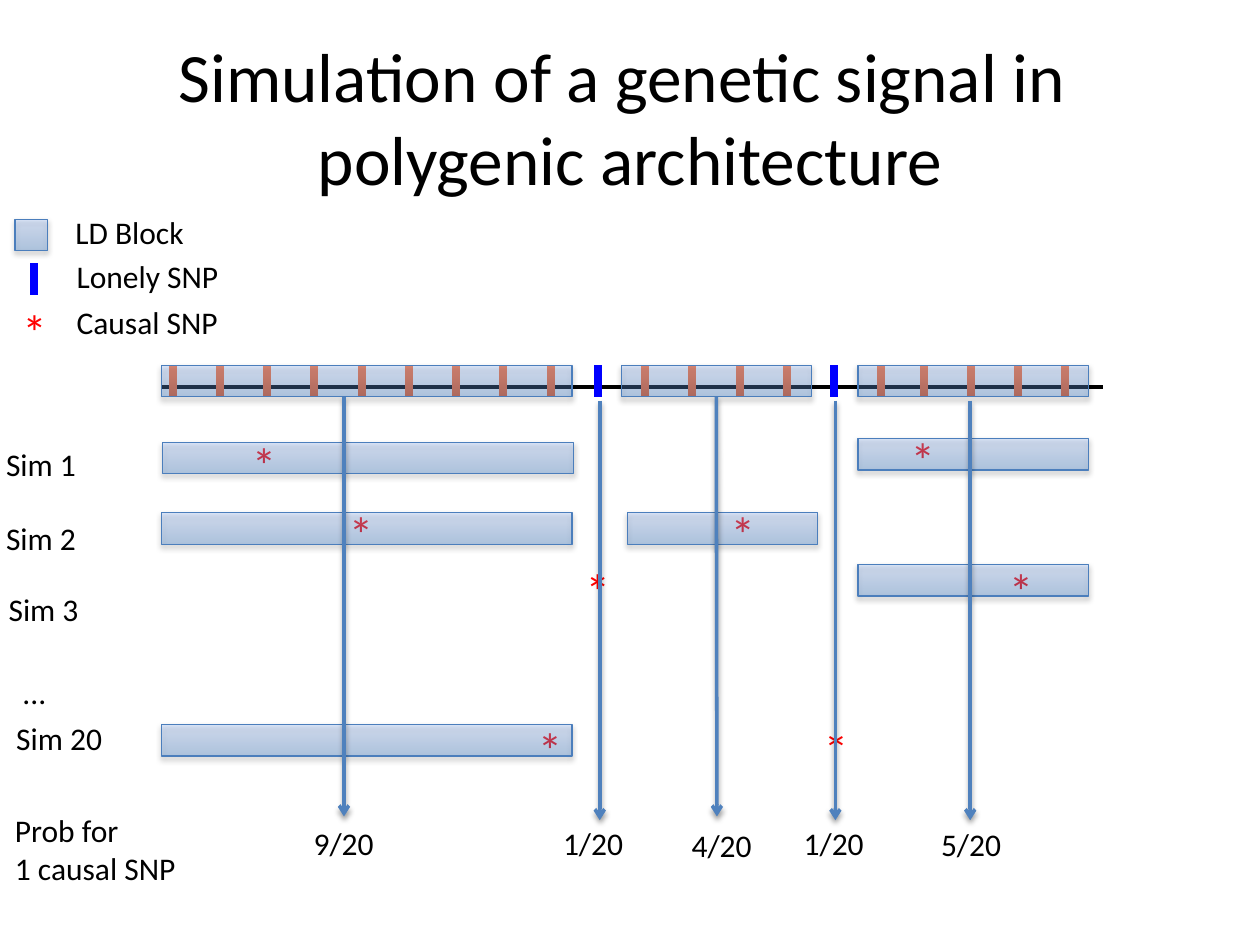
from dataclasses import dataclass

from lxml import etree
from pptx import Presentation
from pptx.dml.color import RGBColor
from pptx.enum.shapes import MSO_CONNECTOR, MSO_SHAPE
from pptx.enum.text import MSO_ANCHOR, PP_ALIGN
from pptx.oxml.ns import qn
from pptx.util import Inches, Pt

STRAIGHT = MSO_CONNECTOR.STRAIGHT
RECT = MSO_SHAPE.RECTANGLE
MIDDLE, TOP = MSO_ANCHOR.MIDDLE, MSO_ANCHOR.TOP
CENTER, LEFT = PP_ALIGN.CENTER, PP_ALIGN.LEFT
BOTTOM_SITE = 2


@dataclass(frozen=True)
class Theme:
    font: str = "Calibri"
    title: float = 39.6
    body: float = 18
    star: float = 28
    text: str = "000000"
    causal: str = "FF0000"
    lonely: str = "0000FF"
    snp: str = "FF6A2C"
    block: tuple = ("3F80CE", "A4C4FF")
    block_line: str = "4B7EBC"
    arrow: str = "4F81BD"


THEME = Theme()

# Genome grid: SNP columns at an even pitch, blocks as (left, width)
SNP_LEFT, SNP_PITCH, SNP_COUNT = 1.37, 0.375, 20
LAST_BLOCK_SNP, LAST_BLOCK_SHIFT = 16, -0.04
LONELY_SNPS = (9, 14)
GENOME_TOP, BLOCK_H = 2.9, 0.25
BLOCKS = ((1.28, 3.26), (4.93, 1.51), (6.81, 1.83))

# Simulated blocks: (block index, top, shift from the genome block)
SIM_BLOCKS = ((0, 3.51, 0.01), (0, 4.07, 0), (2, 3.48, 0),
              (2, 4.48, 0), (1, 4.07, 0.05), (0, 5.75, 0))
STARS = ((1.9, 3.4), (7.13, 3.36), (2.67, 3.95), (5.7, 3.95), (4.55, 4.4),
         (7.91, 4.4), (4.17, 5.66), (6.44, 5.66), (0.08, 2.34))
LABELS = (
    ("LD Block", 0.5, 1.64, 1.07), ("Lonely SNP", 0.51, 1.99, 1.34),
    ("Causal SNP", 0.51, 2.36, 1.33), ("Sim 1", -0.05, 3.48, 0.76),
    ("Sim 2", -0.05, 4.07, 0.76), ("Sim 3", -0.03, 4.63, 0.76),
    ("...", 0.08, 5.29, 0.39), ("Sim 20", 0.03, 5.66, 0.89),
    ("Prob for\n1 causal SNP", 0.02, 6.39, 1.49),
)
# Probabilities: (text, text left, text top, arrow x, arrow start, block index)
PROBS = (("9/20", 2.39, 6.49, 2.73, 3.15, None),
         ("1/20", 4.37, 6.49, 4.76, 3.18, None),
         ("4/20", 5.39, 6.51, 5.69, 3.15, 1),
         ("1/20", 6.28, 6.49, 6.63, 3.18, None),
         ("5/20", 7.37, 6.5, 7.7, 3.18, None))
PROB_W, ARROW_LEN = 0.68, 3.33


def rgb(color):
    return RGBColor.from_string(color)


def add_shadow(spPr, opacity):
    effects = spPr.find(qn("a:effectLst"))
    if effects is None:
        effects = etree.SubElement(spPr, qn("a:effectLst"))
    shadow = etree.SubElement(effects, qn("a:outerShdw"), blurRad=str(Pt(3.1)),
                              dist=str(Pt(1.8)), dir="5400000", rotWithShape="0")
    color = etree.SubElement(shadow, qn("a:srgbClr"), val="000000")
    etree.SubElement(color, qn("a:alpha"), val=str(opacity * 1000))


def add_text(s, text, x, y, w, h=0.4, size=THEME.body, color=THEME.text,
             wrap=False, anchor=TOP, align=LEFT):
    tf = s.shapes.add_textbox(Inches(x), Inches(y), Inches(w), Inches(h)).text_frame
    tf.text = text
    tf.word_wrap = wrap
    tf.vertical_anchor = anchor
    for p in tf.paragraphs:
        p.alignment = align
        p.font.name = THEME.font
        p.font.size = Pt(size)
        p.font.color.rgb = rgb(color)


def add_line(s, x1, y1, x2, y2, color, width):
    line = s.shapes.add_connector(STRAIGHT, Inches(x1), Inches(y1),
                                  Inches(x2), Inches(y2))
    line.line.color.rgb = rgb(color)
    line.line.width = Pt(width)
    etree.SubElement(line._element.spPr, qn("a:effectLst"))
    return line


def add_snp(s, x, y, color):
    add_line(s, x, y, x, y + BLOCK_H, color, 4.5)


def add_arrow(s, x, y, block=None):
    arrow = add_line(s, x, y, x, y + ARROW_LEN, THEME.arrow, 2)
    if block is not None:
        arrow.begin_connect(block, BOTTOM_SITE)
    spPr = arrow._element.spPr
    etree.SubElement(spPr.find(qn("a:ln")), qn("a:tailEnd"), type="arrow")
    add_shadow(spPr, 38)


def add_block(s, x, y, w):
    sp = s.shapes.add_shape(RECT, Inches(x), Inches(y), Inches(w), Inches(BLOCK_H))
    sp.fill.gradient()
    sp.fill.gradient_angle = 90
    for stop, color in zip(sp.fill.gradient_stops, THEME.block):
        stop.color.rgb = rgb(color)
    spPr = sp._element.spPr
    for color in spPr.iter(qn("a:srgbClr")):
        etree.SubElement(color, qn("a:alpha"), val="32000")
    sp.line.color.rgb = rgb(THEME.block_line)
    sp.line.width = Pt(0.75)
    sp.shadow.inherit = False
    add_shadow(spPr, 35)
    return sp


def add_genome(s):
    add_line(s, 1.28, 3.07, 8.75, 3.07, THEME.text, 2.25)
    for i in range(SNP_COUNT):
        shift = LAST_BLOCK_SHIFT if i >= LAST_BLOCK_SNP else 0
        color = THEME.lonely if i in LONELY_SNPS else THEME.snp
        add_snp(s, SNP_LEFT + i * SNP_PITCH + shift, GENOME_TOP, color)
    return [add_block(s, x, GENOME_TOP, w) for x, w in BLOCKS]


def main():
    prs = Presentation()
    prs.slide_width, prs.slide_height = Inches(10), Inches(7.5)
    s = prs.slides.add_slide(prs.slide_layouts[6])

    # Title
    add_text(s, "Simulation of a genetic signal in \vpolygenic architecture",
             0.5, 0.3, 9, 1.25, THEME.title, wrap=True, anchor=MIDDLE, align=CENTER)

    # Genome with its blocks
    genome_blocks = add_genome(s)

    # Legend keys and row labels
    add_block(s, 0.12, 1.74, 0.26)
    add_snp(s, 0.27, 2.09, THEME.lonely)
    for label in LABELS:
        add_text(s, *label)

    # Causal SNPs lie under the translucent simulated blocks
    for x, y in STARS:
        add_text(s, "*", x, y, 0.4, 0.57, THEME.star, THEME.causal)
    for i, y, shift in SIM_BLOCKS:
        x, w = BLOCKS[i]
        add_block(s, x + shift, y, w)

    # Probabilities and their arrows
    for text, x, y, arrow_x, start, i in PROBS:
        add_text(s, text, x, y, PROB_W)
        add_arrow(s, arrow_x, start, None if i is None else genome_blocks[i])

    prs.save("out.pptx")


if __name__ == "__main__":
    main()
